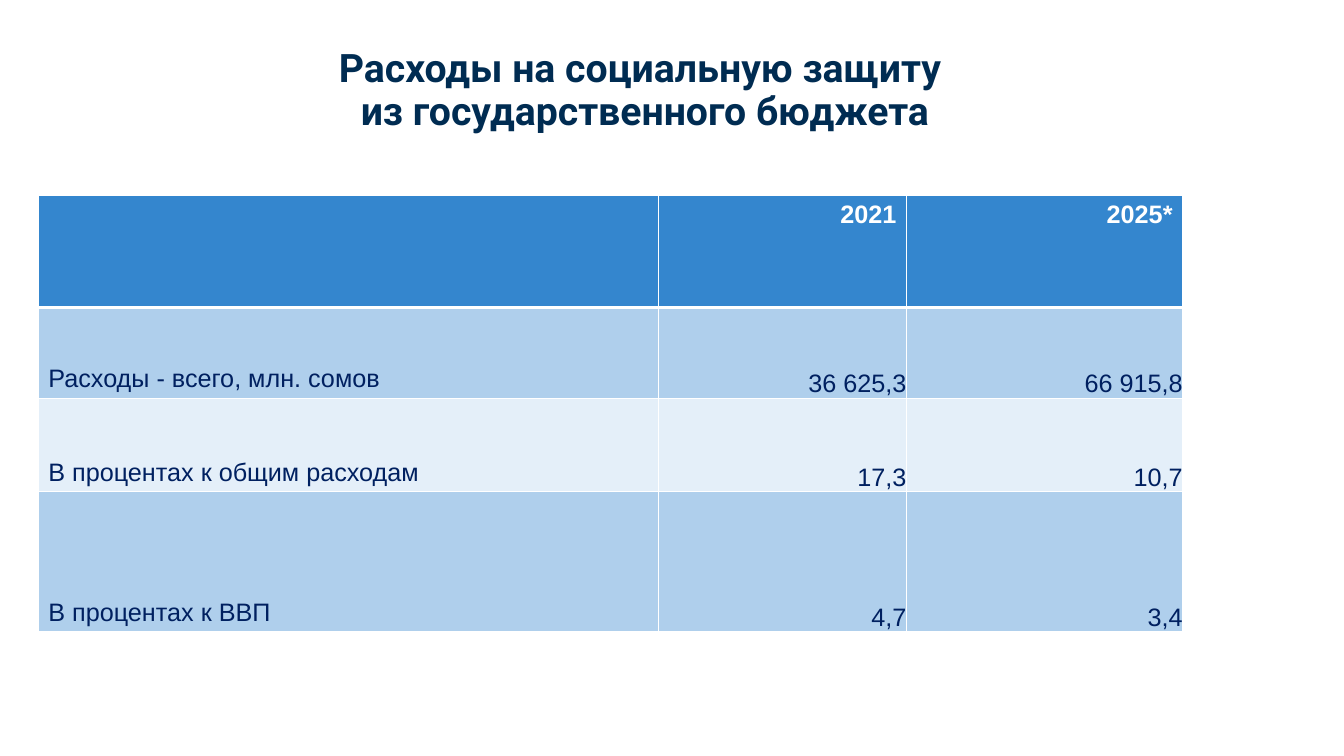
from lxml.etree import SubElement
from pptx import Presentation
from pptx.dml.color import RGBColor
from pptx.enum.text import MSO_ANCHOR as Anchor, PP_ALIGN as Align
from pptx.oxml.ns import qn
from pptx.util import Inches, Pt

COLORS = {
    "title": "002C52", "header": "3486CE", "text": "002060",
    "dark_band": "AFCFEC", "light_band": "E4EFF9", "white": "FFFFFF",
}
TITLE_BOX = (1.59, 0.4, 9.61, 1.01)
TABLE_BOX = (0.38, 1.94, 11.36, 4.33)
COLUMN_WIDTHS = (6.15, 2.46, 2.74)
ROW_HEIGHTS = (1.11, 0.9, 0.93, 1.39)
TITLE = "Расходы на социальную защиту \vиз государственного бюджета"
ROWS = (
    ("", "2021", "2025*"),
    ("Расходы - всего, млн. сомов", "36 625,3", "66 915,8"),
    ("В процентах к общим расходам", "17,3", "10,7"),
    ("В процентах к ВВП", "4,7", "3,4"),
)
TITLE_FONT = {"name": "Roboto", "size": Pt(28), "bold": True}
HEADER_FONT = {"name": "Arial", "size": Pt(18), "bold": True}
BODY_FONT = {**HEADER_FONT, "bold": False}
NO_MARGINS = dict.fromkeys(
    ("margin_left", "margin_top", "margin_right", "margin_bottom"), 0)


def set_attributes(target, values):
    for name, value in values.items():
        setattr(target, name, value)


def rgb(color):
    return RGBColor.from_string(COLORS[color])


def format_font(paragraph, values, color):
    set_attributes(paragraph.font, values)
    paragraph.font.color.rgb = rgb(color)


def add_borders(cell, bottom_width):
    properties = cell._tc.get_or_add_tcPr()
    widths = {"lnL": 1, "lnR": 1, "lnT": 1, "lnB": bottom_width}
    for side, width in widths.items():
        line = SubElement(properties, qn(f"a:{side}"), w=str(Pt(width)))
        fill = SubElement(line, qn("a:solidFill"))
        SubElement(fill, qn("a:srgbClr"), val=COLORS["white"])


def fill_title(slide, box):
    title = slide.shapes.title
    left, top, width, height = map(Inches, box)
    set_attributes(title, {"left": left, "top": top, "width": width, "height": height})
    frame = title.text_frame
    set_attributes(frame, {"text": TITLE, "word_wrap": True,
                           "vertical_anchor": Anchor.MIDDLE})
    paragraph = frame.paragraphs[0]
    set_attributes(paragraph, {"alignment": Align.CENTER, "line_spacing": 0.9})
    format_font(paragraph, TITLE_FONT, "title")


def fill_cell(cell, text, row, column):
    is_header, is_label = row == 0, column == 0
    # The rule under the header matches the top border of the first body row.
    add_borders(cell, 3 if is_header else 1)
    if row == 1:
        cell._tc.tcPr.find(qn("a:lnT")).set("w", str(Pt(3)))
    cell.fill.solid()
    band = "dark_band" if row % 2 else "light_band"
    if row == len(ROWS) - 1:
        band = "dark_band"
    cell.fill.fore_color.rgb = rgb("header" if is_header else band)
    cell.text = text
    cell.vertical_anchor = Anchor.TOP if is_header else Anchor.BOTTOM
    if not is_header and not is_label:
        set_attributes(cell, NO_MARGINS)
    paragraph = cell.text_frame.paragraphs[0]
    paragraph.alignment = Align.LEFT if is_label else Align.RIGHT
    format_font(paragraph, HEADER_FONT if is_header else BODY_FONT,
                "white" if is_header else "text")


def add_spending_table(slide, box):
    table = slide.shapes.add_table(
        len(ROWS), len(COLUMN_WIDTHS), *map(Inches, box)).table
    for column, width in zip(table.columns, COLUMN_WIDTHS):
        column.width = Inches(width)
    for row, height in zip(table.rows, ROW_HEIGHTS):
        row.height = Inches(height)
    for row, texts in enumerate(ROWS):
        for column, text in enumerate(texts):
            fill_cell(table.cell(row, column), text, row, column)


def main():
    presentation = Presentation()
    set_attributes(presentation, {"slide_width": Inches(13.33),
                                  "slide_height": Inches(7.5)})
    slide = presentation.slides.add_slide(
        presentation.slide_layouts.get_by_name("Title Only"))
    fill_title(slide, TITLE_BOX)
    add_spending_table(slide, TABLE_BOX)
    presentation.save("out.pptx")


if __name__ == "__main__":
    main()
